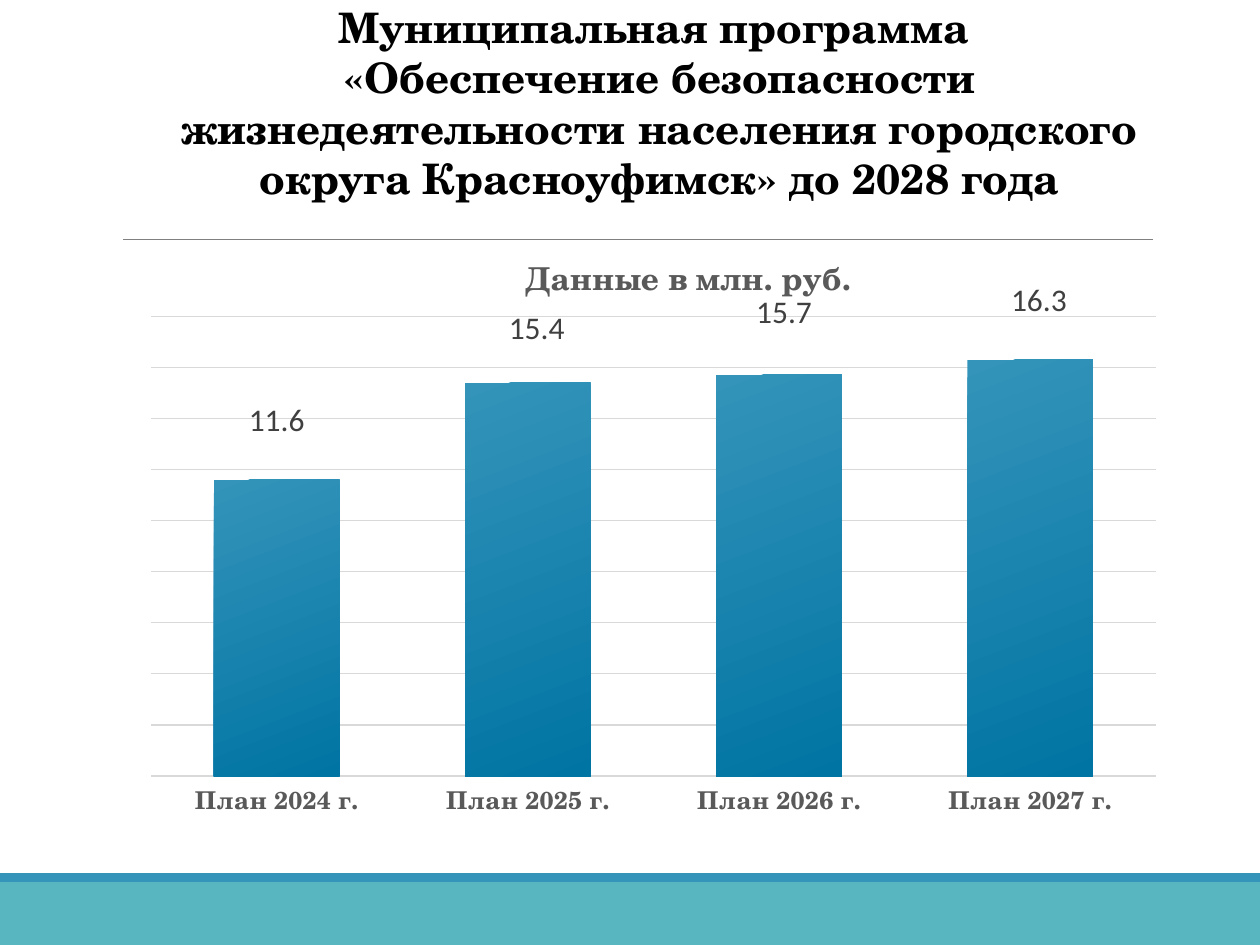
from dataclasses import dataclass

import lxml.etree
import pptx
import pptx.chart.data
import pptx.dml.color
import pptx.enum.chart
import pptx.enum.shapes
import pptx.enum.text
import pptx.oxml.ns
import pptx.util
from pptx.util import Inches


@dataclass(frozen=True)
class Theme:
    serif: str = "TeX Gyre Schola"
    sans: str = "Calibri"
    black: str = "000000"
    heading: str = "595959"
    label: str = "404040"
    rule: str = "808080"
    grid: str = "D9D9D9"
    blue: str = "3494BA"
    deep_blue: str = "0074A3"
    teal: str = "58B6C0"
    title_size: int = 24
    chart_size: int = 18
    category_size: int = 14
    base_size: int = 10


@dataclass(frozen=True)
class Band:
    top: float
    height: float
    color: str


@dataclass(frozen=True)
class Plan:
    category: str
    amount: float
    label_x: float
    label_y: float


THEME = Theme()
BANDS = [Band(7, 0.5, THEME.teal), Band(6.93, 0.07, THEME.blue)]
PLANS = [
    Plan("План 2024 г.", 11.6, 0, -0.28),
    Plan("План 2025 г.", 15.4, 0.07, -0.24),
    Plan("План 2026 г.", 15.7, 0.04, -0.31),
    Plan("План 2027 г.", 16.3, 0.07, -0.28),
]
TITLE_LINES = [
    "Муниципальная программа ",
    "«Обеспечение безопасности жизнедеятельности населения городского округа "
    "Красноуфимск» до 2028 года",
]
NUMBER_FORMAT = "#,##0.0"
CHART_WIDTH, CHART_HEIGHT = 8.27, 4.88
LABEL_EXTENSION = "{CE6537A1-D6FC-4f65-9D91-7224C49458BB}"
LABEL_NAMESPACE = "http://schemas.microsoft.com/office/drawing/2012/chart"


def rgb(color: str) -> pptx.dml.color.RGBColor:
    return pptx.dml.color.RGBColor.from_string(color)


def format_font(font, *, size: float, color: str, name: str = THEME.serif, bold: bool = True) -> None:
    font.name = name
    font.size = pptx.util.Pt(size)
    font.bold = bold
    font.color.rgb = rgb(color)


def write_text(paragraph, text: str, *, align=pptx.enum.text.PP_ALIGN.CENTER, **font_format) -> None:
    paragraph.alignment = align
    run = paragraph.add_run()
    run.text = text
    format_font(run.font, **font_format)


def format_line(line, color: str, width: float) -> None:
    line.color.rgb = rgb(color)
    line.width = pptx.util.Pt(width)


def make_layout(modes: dict[str, str], **lengths: float):
    layout = lxml.etree.Element(pptx.oxml.ns.qn("c:layout"))
    manual = lxml.etree.SubElement(layout, pptx.oxml.ns.qn("c:manualLayout"))
    fractions = {
        name: length / (CHART_WIDTH if name in "xw" else CHART_HEIGHT)
        for name, length in lengths.items()
    }
    for name, value in {**modes, **fractions}.items():
        lxml.etree.SubElement(manual, pptx.oxml.ns.qn(f"c:{name}")).set("val", str(value))
    return layout


def replace_layout(parent, layout, after: str = "") -> None:
    for old in parent.findall(pptx.oxml.ns.qn("c:layout")):
        parent.remove(old)
    if after:
        parent.find(pptx.oxml.ns.qn(after)).addnext(layout)
    else:
        parent.insert(0, layout)


def hide_leader_lines(labels) -> None:
    element = labels._element
    for leader_lines in element.findall(pptx.oxml.ns.qn("c:showLeaderLines")):
        leader_lines.set("val", "0")
    extensions = lxml.etree.SubElement(element, pptx.oxml.ns.qn("c:extLst"))
    extension = lxml.etree.SubElement(extensions, pptx.oxml.ns.qn("c:ext"), uri=LABEL_EXTENSION)
    lxml.etree.SubElement(
        extension, f"{{{LABEL_NAMESPACE}}}showLeaderLines", nsmap={"c15": LABEL_NAMESPACE}
    ).set("val", "0")


def draw_band(slide, band: Band) -> None:
    shape = slide.shapes.add_shape(
        pptx.enum.shapes.MSO_SHAPE.RECTANGLE,
        Inches(0), Inches(band.top), Inches(10), Inches(band.height),
    )
    shape.shadow.inherit = False
    shape.fill.solid()
    shape.fill.fore_color.rgb = rgb(band.color)
    shape.line.fill.background()


def draw_rule(slide) -> None:
    connector = slide.shapes.add_connector(
        pptx.enum.shapes.MSO_CONNECTOR.STRAIGHT,
        Inches(0.98), Inches(1.9), Inches(9.15), Inches(1.9),
    )
    format_line(connector.line, THEME.rule, 0.5)
    lxml.etree.SubElement(connector._element.spPr, pptx.oxml.ns.qn("a:effectLst"))


def draw_title(slide) -> None:
    title = slide.shapes.title
    title.left, title.top = Inches(1.3), Inches(-0.05)
    title.width, title.height = Inches(7.87), Inches(1.72)
    frame = title.text_frame
    frame.word_wrap = True
    frame.auto_size = pptx.enum.text.MSO_AUTO_SIZE.NONE
    frame.vertical_anchor = pptx.enum.text.MSO_ANCHOR.MIDDLE
    for index, text in enumerate(TITLE_LINES):
        paragraph = frame.add_paragraph() if index else frame.paragraphs[0]
        write_text(paragraph, text, size=THEME.title_size, color=THEME.black)


def format_axes(chart) -> None:
    category_axis = chart.category_axis
    category_axis.major_tick_mark = pptx.enum.chart.XL_TICK_MARK.NONE
    format_font(category_axis.tick_labels.font, size=THEME.category_size, color=THEME.heading)
    format_line(category_axis.format.line, THEME.grid, 1)
    value_axis = chart.value_axis
    value_axis.minimum_scale, value_axis.maximum_scale, value_axis.major_unit = 0, 18, 2
    value_axis.has_major_gridlines = True
    format_line(value_axis.major_gridlines.format.line, THEME.grid, 0.75)
    value_axis.tick_labels.number_format = NUMBER_FORMAT
    value_axis.tick_labels.number_format_is_linked = False
    value_axis.visible = False


def format_columns(plot) -> None:
    plot.gap_width, plot.overlap = 100, -24
    plot.vary_by_categories = False
    series = plot.series[0]
    fill = series.format.fill
    fill.gradient()
    fill.gradient_angle = 360 - 69
    for stop, color, position in zip(fill.gradient_stops, (THEME.blue, THEME.deep_blue), (0, 1)):
        stop.color.rgb = rgb(color)
        stop.position = position
    label_format = dict(size=THEME.chart_size, color=THEME.label, name=THEME.sans, bold=False)
    labels = series.data_labels
    labels.show_value = True
    labels.number_format = NUMBER_FORMAT
    labels.number_format_is_linked = False
    format_font(labels.font, **label_format)
    for index, plan in enumerate(PLANS):
        label = series.points[index].data_label
        format_font(label.font, **label_format)
        label.position = pptx.enum.chart.XL_LABEL_POSITION.OUTSIDE_END
        element = labels._element.findall(pptx.oxml.ns.qn("c:dLbl"))[index]
        replace_layout(element, make_layout({}, x=plan.label_x, y=plan.label_y), "c:idx")
    hide_leader_lines(labels)


def draw_chart(slide) -> None:
    data = pptx.chart.data.CategoryChartData(number_format=NUMBER_FORMAT)
    data.categories = [plan.category for plan in PLANS]
    data.add_series("Series 1", [plan.amount for plan in PLANS])
    chart = slide.shapes.add_chart(
        pptx.enum.chart.XL_CHART_TYPE.COLUMN_CLUSTERED,
        Inches(0.91), Inches(1.94), Inches(CHART_WIDTH), Inches(CHART_HEIGHT), data,
    ).chart
    format_font(chart.font, size=THEME.base_size, color=THEME.black, bold=False)
    chart.has_legend = False
    chart.has_title = True
    title = chart.chart_title
    write_text(title.text_frame.paragraphs[0], "Данные в млн. руб.",
               size=THEME.chart_size, color=THEME.heading)
    edges = {"xMode": "edge", "yMode": "edge"}
    replace_layout(title._element, make_layout(edges, x=3.22, y=0), "c:tx")
    plot_area = chart._chartSpace.chart.plotArea
    replace_layout(plot_area, make_layout(
        {"layoutTarget": "inner", **edges}, x=0.29, y=0.57, w=7.98, h=3.65))
    format_axes(chart)
    format_columns(chart.plots[0])


def main() -> None:
    presentation = pptx.Presentation()
    presentation.slide_width, presentation.slide_height = Inches(10), Inches(7.5)
    slide = presentation.slides.add_slide(presentation.slide_layouts.get_by_name("Title Only"))
    draw_rule(slide)
    for band in BANDS:
        draw_band(slide, band)
    draw_title(slide)
    draw_chart(slide)
    presentation.save("out.pptx")


if __name__ == "__main__":
    main()
